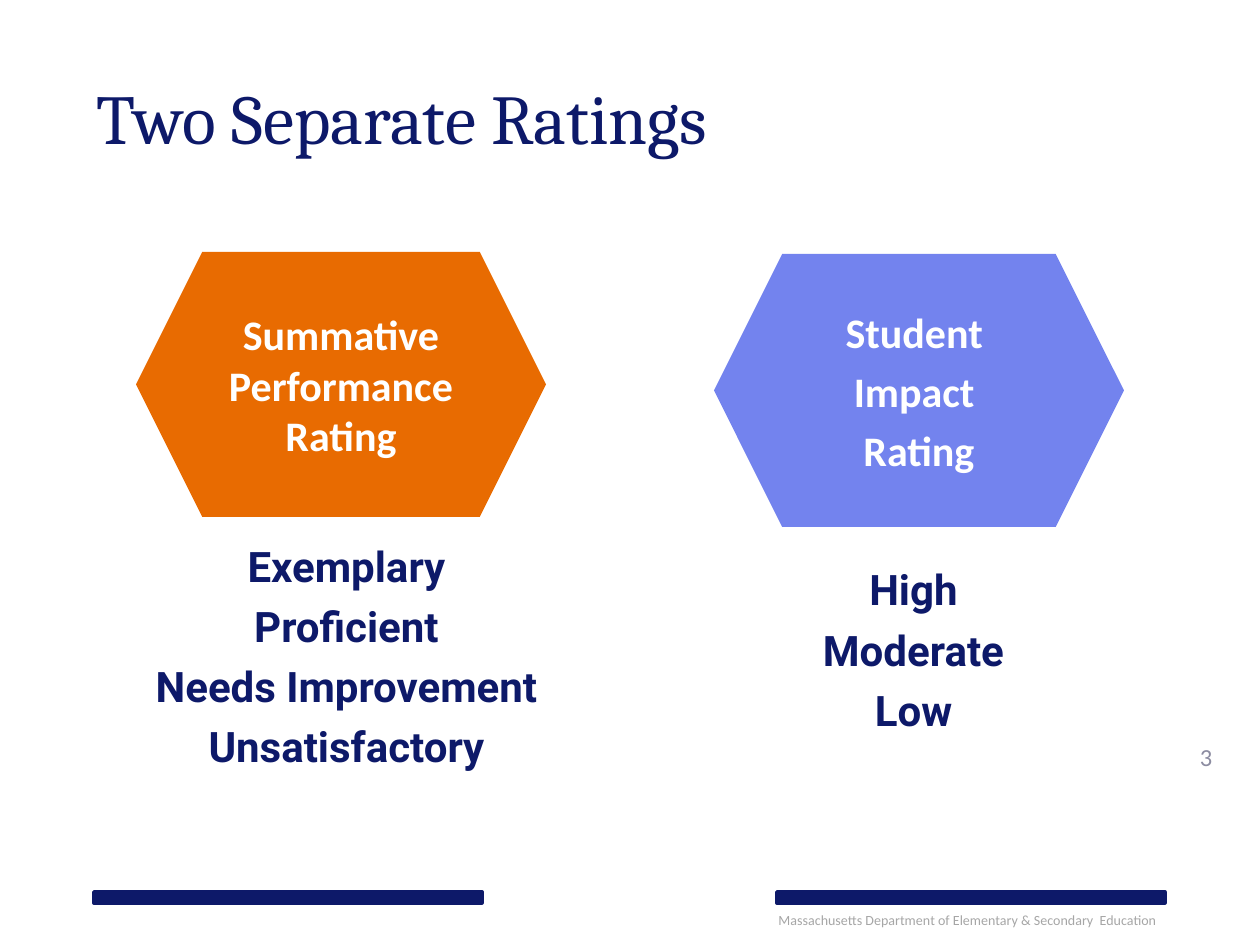
from pptx import Presentation
from pptx.dml.color import RGBColor as RGB
from pptx.enum.shapes import MSO_SHAPE as SHAPE
from pptx.enum.text import MSO_ANCHOR as ANCHOR, PP_ALIGN as ALIGN
from pptx.util import Emu, Pt

SCALE = 914400 / 126
COLORS = {"navy": "0D1969", "orange": "E86B01", "blue": "7383EE",
          "white": "FFFFFF", "gray": "A6A6A6", "slate": "8C8CA1"}


def px(*nums):
    return [Emu(round(n * SCALE)) for n in nums]


def write(shape, lines, face, size, color, bold=False, align=ALIGN.CENTER,
          anchor=ANCHOR.MIDDLE, gap=0):
    frame = shape.text_frame
    frame.word_wrap = True
    frame.vertical_anchor = anchor
    frame.text = "\n".join(lines)
    for i, para in enumerate(frame.paragraphs):
        para.alignment = align
        if i and gap:
            para.space_before = Pt(gap)
        font = para.font
        font.name, font.size, font.bold = face, Pt(size), bold
        font.color.rgb = RGB.from_string(COLORS[color])


deck = Presentation()
deck.slide_width, deck.slide_height = px(1260, 945)
slide = deck.slides.add_slide(deck.slide_layouts[5])
shapes = slide.shapes

# Title
title = shapes.title
title.left, title.top, title.width, title.height = px(84, 38, 1092, 158)
write(title, ["Two Separate Ratings"], "Cambria", 40, "navy", align=ALIGN.LEFT)

# Footer bars
for left in (94, 777):
    bar = shapes.add_shape(SHAPE.RECTANGLE, *px(left, 892, 388, 11))
    bar.shadow.inherit = False
    bar.fill.solid()
    bar.fill.fore_color.rgb = RGB.from_string(COLORS["navy"])
    bar.line.color.rgb = RGB.from_string(COLORS["navy"])
    bar.line.width = Pt(2)

# Footer text and page number
foot = shapes.add_textbox(*px(766, 905, 410, 30))
write(foot, ["Massachusetts Department of Elementary & Secondary  Education"],
      "Calibri", 8, "gray", align=ALIGN.LEFT, anchor=ANCHOR.TOP)
page = shapes.add_textbox(*px(1169, 725, 74, 63))
write(page, ["3"], "Calibri", 14, "slate")

# Rating hexagons: box, fill, lines, gap
ratings = [
    ((136, 252, 410, 265), "orange", ["Summative", "Performance Rating"], 0),
    ((714, 254, 410, 273), "blue", ["Student ", "Impact ", "Rating"], 4.8),
]
for box, fill, lines, gap in ratings:
    hexagon = shapes.add_shape(SHAPE.HEXAGON, *px(*box))
    hexagon.shadow.inherit = False
    hexagon.fill.solid()
    hexagon.fill.fore_color.rgb = RGB.from_string(COLORS[fill])
    hexagon.line.fill.background()
    write(hexagon, lines, "Calibri", 24, "white", bold=True, gap=gap)

# Rating levels
levels = [
    ((84, 540, 525, 245), ["Exemplary", "Proficient", "Needs Improvement",
                           "Unsatisfactory"]),
    ((651, 564, 525, 186), ["High", "Moderate", "Low"]),
]
for box, lines in levels:
    scale = shapes.add_textbox(*px(*box))
    scale.text_frame.margin_top = 0
    write(scale, lines, "Roboto", 24, "navy", bold=True, anchor=ANCHOR.TOP, gap=5.6)

deck.save("out.pptx")
